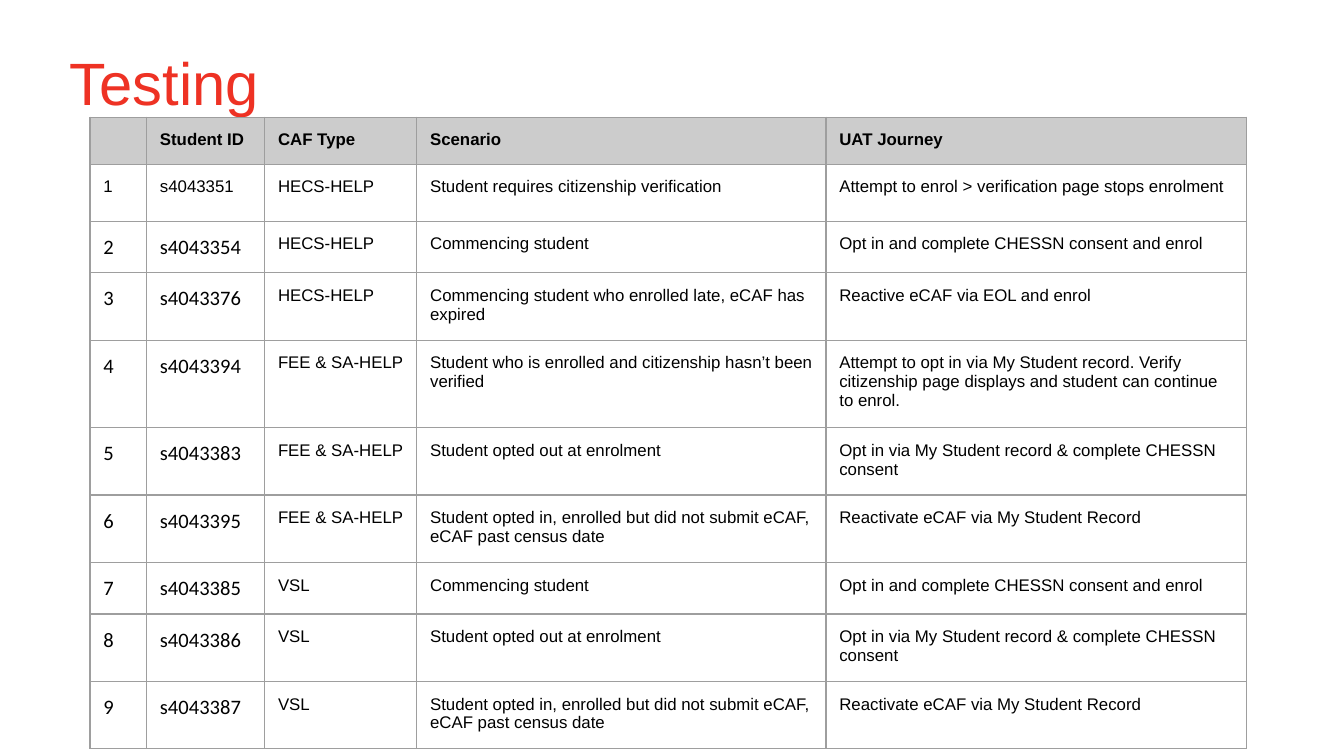
"""Build the Testing slide with its table of UAT scenarios."""
from dataclasses import dataclass

from lxml.etree import SubElement
from pptx import Presentation
from pptx.dml.color import RGBColor as RGB
from pptx.enum.text import MSO_ANCHOR as Anchor
from pptx.oxml.ns import qn
from pptx.util import Pt


@dataclass(frozen=True)
class Theme:
    title: str = "EE3224"
    ink: str = "000000"
    header: str = "CCCCCC"
    border: str = "9E9E9E"
    font: str = "Arial"
    id_font: str = "Calibri"
    title_size: float = 32
    body_size: float = 9
    id_size: float = 11
    border_width: float = 0.75
    inset: float = 7.2


THEME = Theme()
COLUMNS = [30.25, 63.25, 81.5, 219.25, 225.5]
HEIGHTS = [25, 30.5] + [27.5] * 8
HEADER = ["", "Student ID", "CAF Type", "Scenario", "UAT Journey"]
CASES = [
    ["s4043351", "HECS-HELP", "Student requires citizenship verification",
     "Attempt to enrol > verification page stops enrolment"],
    ["s4043354", "HECS-HELP", "Commencing student",
     "Opt in and complete CHESSN consent and enrol"],
    ["s4043376", "HECS-HELP", "Commencing student who enrolled late, eCAF has expired",
     "Reactive eCAF via EOL and enrol"],
    ["s4043394", "FEE & SA-HELP",
     "Student who is enrolled and citizenship hasn’t been verified",
     "Attempt to opt in via My Student record. Verify citizenship page displays "
     "and student can continue to enrol."],
    ["s4043383", "FEE & SA-HELP", "Student opted out at enrolment",
     "Opt in via My Student record & complete CHESSN consent"],
    ["s4043395", "FEE & SA-HELP",
     "Student opted in, enrolled but did not submit eCAF, eCAF past census date",
     "Reactivate eCAF via My Student Record"],
    ["s4043385", "VSL", "Commencing student",
     "Opt in and complete CHESSN consent and enrol"],
    ["s4043386", "VSL", "Student opted out at enrolment",
     "Opt in via My Student record & complete CHESSN consent"],
    ["s4043387", "VSL",
     "Student opted in, enrolled but did not submit eCAF, eCAF past census date",
     "Reactivate eCAF via My Student Record"],
]


def set_text(tf, text, font, size, color, bold=False):
    p = tf.paragraphs[0]
    p.text = text
    for r in p.runs:
        r.font.name, r.font.size, r.font.bold = font, Pt(size), bold
        r.font.color.rgb = RGB.from_string(color)
    if not text:
        SubElement(p._p, qn("a:endParaRPr"), sz=str(int(size * 100)))


def set_insets(box):
    box.margin_left = box.margin_right = Pt(THEME.inset)
    box.margin_top = box.margin_bottom = Pt(THEME.inset)


def set_borders(cell):
    tcPr = cell._tc.get_or_add_tcPr()
    for i, side in enumerate(("lnL", "lnR", "lnT", "lnB")):
        ln = tcPr.makeelement(qn(f"a:{side}"), {"w": str(Pt(THEME.border_width))})
        fill = SubElement(ln, qn("a:solidFill"))
        SubElement(fill, qn("a:srgbClr"), val=THEME.border)
        tcPr.insert(i, ln)


def add_title(s, text):
    sp = s.shapes.add_textbox(Pt(30.25), Pt(16.5), Pt(648), Pt(54.75))
    tf = sp.text_frame
    tf.word_wrap = True
    tf.vertical_anchor = Anchor.MIDDLE
    set_insets(tf)
    set_text(tf, text, THEME.font, THEME.title_size, THEME.title)


def fill_cell(cell, text, row, col):
    set_insets(cell)
    if row == 0:
        cell.fill.solid()
        cell.fill.fore_color.rgb = RGB.from_string(THEME.header)
    else:
        cell.fill.background()
    set_borders(cell)
    is_id = row > 1 and col < 2
    font = THEME.id_font if is_id else THEME.font
    size = THEME.id_size if is_id else THEME.body_size
    set_text(cell.text_frame, text, font, size, THEME.ink, bold=row == 0)


def add_cases(s):
    rows = [HEADER] + [[str(n), *case] for n, case in enumerate(CASES, 1)]
    table = s.shapes.add_table(len(rows), len(COLUMNS), Pt(48.25), Pt(62.75),
                               Pt(sum(COLUMNS)), Pt(sum(HEIGHTS))).table
    table.first_row = table.horz_banding = False
    for column, width in zip(table.columns, COLUMNS):
        column.width = Pt(width)
    for i, (texts, height) in enumerate(zip(rows, HEIGHTS)):
        table.rows[i].height = Pt(height)
        for j, text in enumerate(texts):
            fill_cell(table.cell(i, j), text, i, j)


def main():
    prs = Presentation()
    prs.slide_width, prs.slide_height = Pt(720), Pt(405)
    s = prs.slides.add_slide(prs.slide_layouts[6])
    add_title(s, "Testing")
    add_cases(s)
    prs.save("out.pptx")


if __name__ == "__main__":
    main()
